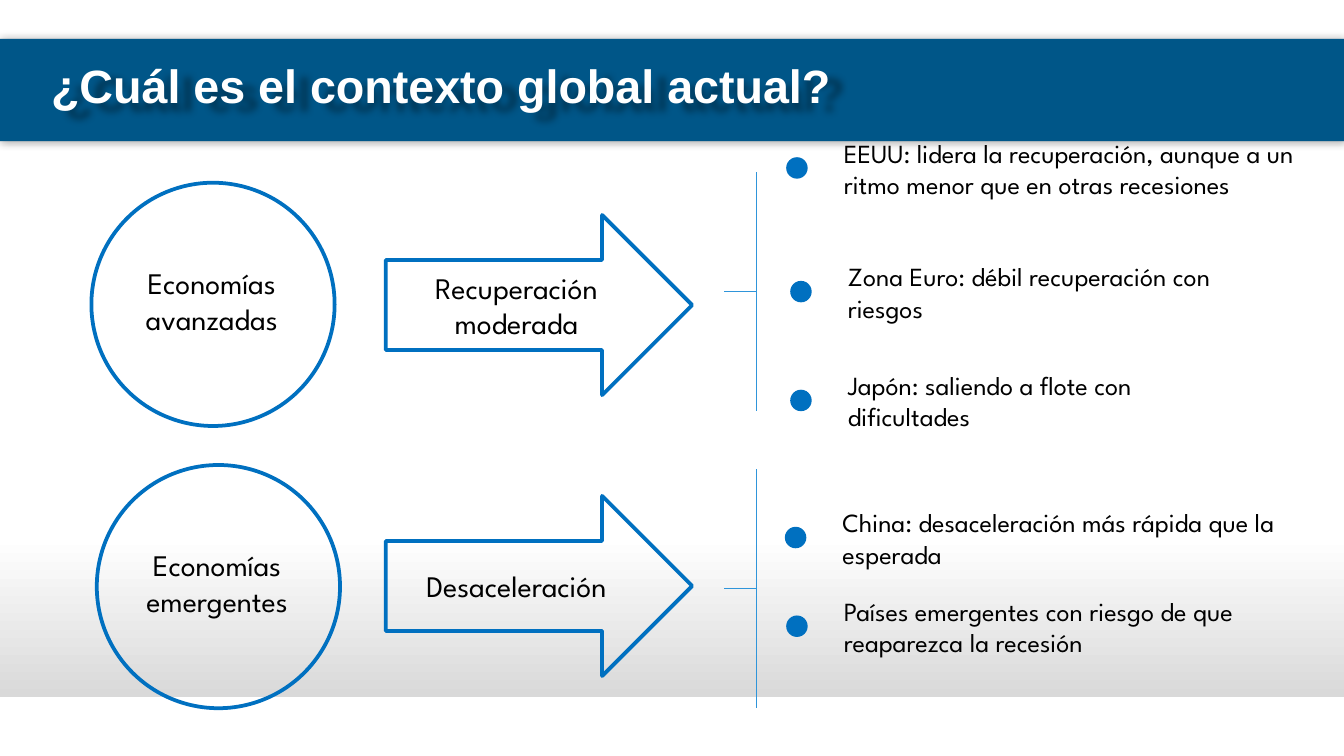
from dataclasses import dataclass

from lxml import etree
from pptx import Presentation
from pptx.dml.color import RGBColor
from pptx.enum.shapes import MSO_CONNECTOR, MSO_SHAPE
from pptx.enum.text import MSO_ANCHOR, PP_ALIGN
from pptx.oxml.ns import qn
from pptx.util import Inches, Pt

RECT, OVAL, ARROW = MSO_SHAPE.RECTANGLE, MSO_SHAPE.OVAL, MSO_SHAPE.RIGHT_ARROW
STRAIGHT = MSO_CONNECTOR.STRAIGHT
LEFT, CENTER = PP_ALIGN.LEFT, PP_ALIGN.CENTER
TOP, MIDDLE = MSO_ANCHOR.TOP, MSO_ANCHOR.MIDDLE


@dataclass(frozen=True)
class Theme:
    """Colours, fonts and type sizes of the slide."""
    band: str = "005688"
    accent: str = "0070C0"
    bracket: str = "2F95DA"
    shade: str = "D9D9D9"
    white: str = "FFFFFF"
    ink: str = "000000"
    title_font: str = "Arial"
    body_font: str = "League Spartan"
    title_size: int = 25
    label_size: int = 16
    note_size: int = 14


THEME = Theme()

GROUPS = [
    dict(circle=(0.68, 1.36), economy="Economías avanzadas",
         arrow_top=1.6, trend="Recuperación moderada", bracket_top=1.28,
         notes=[
             (6.18, 0.97, 3.62, "EEUU: lidera la recuperación, aunque a un ritmo menor que en otras recesiones"),
             (6.21, 1.89, 3.43, "Zona Euro: débil recuperación con riesgos"),
             (6.21, 2.7, 3.24, "Japón: saliendo a flote con dificultades"),
         ]),
    dict(circle=(0.72, 3.46), economy="Economías emergentes",
         arrow_top=3.69, trend="Desaceleración", bracket_top=3.49,
         notes=[
             (6.17, 3.72, 3.62, "China: desaceleración más rápida que la esperada"),
             (6.18, 4.38, 3.62, "Países emergentes con riesgo de que reaparezca la recesión"),
         ]),
]


def rgb(value):
    """Turn a hex string into a colour."""
    return RGBColor.from_string(value)


def box(*lengths):
    """Convert inches to lengths."""
    return [Inches(v) for v in lengths]


def write(shape, text, size, align=LEFT, anchor=TOP):
    """Put one body-font paragraph in a shape."""
    tf = shape.text_frame
    tf.word_wrap = True
    tf.vertical_anchor = anchor
    p = tf.paragraphs[0]
    p.text = text
    p.alignment = align
    p.font.name = THEME.body_font
    p.font.size = Pt(size)
    p.font.color.rgb = rgb(THEME.ink)


def add_shape(s, kind, at, fill=None, line=None):
    """Add a flat preset shape with an optional fill and outline."""
    sp = s.shapes.add_shape(kind, *box(*at))
    sp.shadow.inherit = False
    if fill:
        sp.fill.solid()
        sp.fill.fore_color.rgb = rgb(fill)
    else:
        sp.fill.background()
    if line:
        sp.line.color.rgb = rgb(line)
        sp.line.width = Pt(2)
    else:
        sp.line.fill.background()
    return sp


def add_text(s, at, text, size, align=LEFT):
    """Add a wrapped text box."""
    write(s.shapes.add_textbox(*box(*at)), text, size, align)


def add_line(s, *ends):
    """Add a thin bracket line."""
    c = s.shapes.add_connector(STRAIGHT, *box(*ends))
    c.line.color.rgb = rgb(THEME.bracket)
    c.line.width = Pt(0.75)
    etree.SubElement(c._element.spPr, qn("a:effectLst"))


def cast_shadow(sp, alpha, blur, dist=0, angle=0):
    """Give a shape a blurred outer shadow."""
    sp.shadow.inherit = False
    effects = sp._element.spPr.find(qn("a:effectLst"))
    shadow = etree.SubElement(effects, qn("a:outerShdw"), blurRad=str(Pt(blur)),
                              dist=str(Pt(dist)), dir=str(angle * 60000),
                              algn="ctr", rotWithShape="0")
    color = etree.SubElement(shadow, qn("a:srgbClr"), val=THEME.ink)
    etree.SubElement(color, qn("a:alpha"), val=str(alpha * 1000))


def add_backdrop(s):
    """Draw the fading floor and the title band behind the title."""
    floor = add_shape(s, RECT, (0, 3.99, 10, 1.2))
    floor.fill.gradient()
    floor.fill.gradient_angle = 90
    stops = zip(floor.fill.gradient_stops, (THEME.shade, THEME.white), (0, 1))
    for stop, color, position in stops:
        stop.color.rgb = rgb(color)
        stop.position = position
    band = add_shape(s, RECT, (0, 0.29, 10, 0.76), fill=THEME.band)
    cast_shadow(band, alpha=40, blur=5)
    for sp in (floor, band):
        s.shapes.title._element.addprevious(sp._element)


def add_title(s, text):
    """Format the title placeholder."""
    title = s.shapes.title
    title.left, title.top, title.width, title.height = box(0.28, 0.45, 9.45, 0.52)
    write(title, text, THEME.title_size)
    p = title.text_frame.paragraphs[0]
    p.line_spacing = 0.8
    p.space_before = Pt(0)
    p.font.name = THEME.title_font
    p.font.bold = True
    p.font.color.rgb = rgb(THEME.white)
    cast_shadow(title, alpha=40, blur=4, dist=8, angle=30)


def add_circle(s, left, top, text):
    """Draw an outlined circle and its label."""
    add_text(s, (left - 0.05, top + 0.56, 1.89, 0.64), text, THEME.label_size, CENTER)
    add_shape(s, OVAL, (left, top, 1.81, 1.81), line=THEME.accent)


def add_arrow(s, top, text):
    """Draw an outlined block arrow with its text."""
    arrow = add_shape(s, ARROW, (2.87, top, 2.28, 1.34), line=THEME.accent)
    write(arrow, text, THEME.label_size, CENTER, MIDDLE)


def add_bracket(s, top, x=5.63, height=1.78, tick=0.24):
    """Draw a vertical stem with a tick at its middle."""
    middle = top + height / 2
    add_line(s, x - tick, middle, x, middle)
    add_line(s, x, top, x, top + height)


def add_note(s, left, top, width, text):
    """Draw a dot and the note beside it."""
    add_text(s, (left, top, width, 0.57), text, THEME.note_size)
    add_shape(s, OVAL, (left - 0.33, top + 0.2, 0.16, 0.16), fill=THEME.accent)


def main():
    """Build and save the slide."""
    prs = Presentation()
    prs.slide_width = Inches(10)
    prs.slide_height = prs.slide_width * 9 // 16
    s = prs.slides.add_slide(prs.slide_layouts[5])
    add_backdrop(s)
    add_title(s, "¿Cuál es el contexto global actual?")
    for group in GROUPS:
        add_circle(s, *group["circle"], group["economy"])
        add_arrow(s, group["arrow_top"], group["trend"])
        add_bracket(s, group["bracket_top"])
        for note in group["notes"]:
            add_note(s, *note)
    prs.save("out.pptx")


if __name__ == "__main__":
    main()
